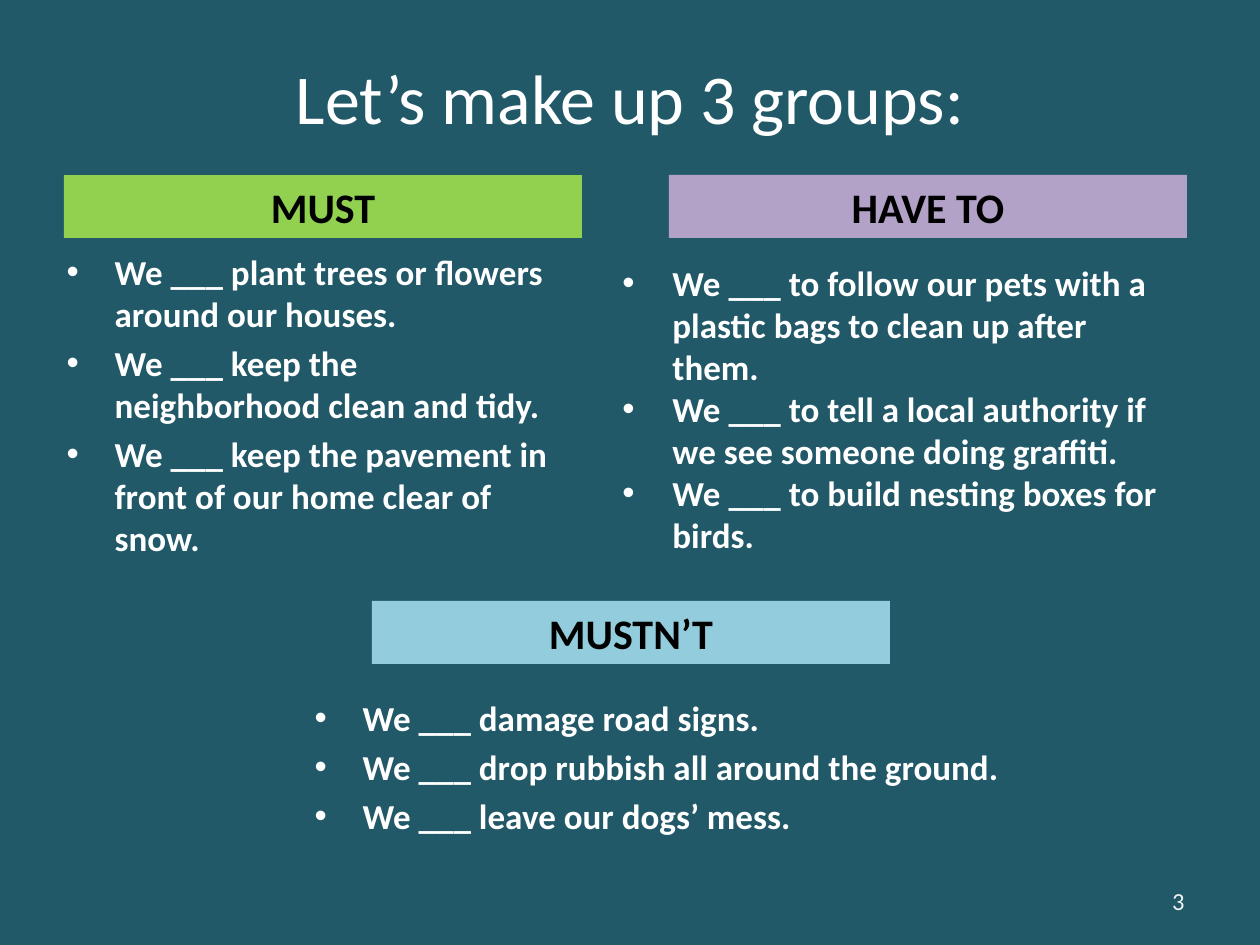
import pptx
import pptx.dml.color
import pptx.enum.shapes
import pptx.enum.text
import pptx.oxml
import pptx.oxml.ns
import pptx.util

EMU_PER_PX = 914400 / 126
ALIGN = pptx.enum.text.PP_ALIGN
ANCHOR = pptx.enum.text.MSO_ANCHOR
BAND_WIDTH, BAND_HEIGHT = 518, 63
TOP_BAND = 175


def px(length):
    return pptx.util.Emu(round(length * EMU_PER_PX))


def color(hex_string):
    return pptx.dml.color.RGBColor.from_string(hex_string)


class GroupSlide:
    """Holds the text style and the slide that is being filled."""

    font_name = "Calibri"
    light, dark = "FFFFFF", "000000"

    def __init__(self, slide, background):
        self.slide = slide
        slide.background.fill.solid()
        slide.background.fill.fore_color.rgb = color(background)

    def place(self, shape, left, top, width, height):
        shape.left, shape.top = px(left), px(top)
        shape.width, shape.height = px(width), px(height)

    def set_text(self, shape, lines, size, font_color, align, anchor, bold=False, gap=0, indent=0):
        """Fill a shape with one paragraph per line; an indent makes them bullets."""
        frame = shape.text_frame
        frame.text = "\n".join(lines)
        frame.word_wrap = True
        frame.auto_size = pptx.enum.text.MSO_AUTO_SIZE.NONE
        frame.vertical_anchor = anchor
        for index, paragraph in enumerate(frame.paragraphs):
            paragraph.alignment = align
            paragraph.space_before = pptx.util.Pt(gap if index else 0)
            if indent:
                self.add_bullet(paragraph, indent)
            font = paragraph.font
            font.name, font.size, font.bold = self.font_name, pptx.util.Pt(size), bold
            font.color.rgb = color(font_color)

    def add_bullet(self, paragraph, indent):
        properties = paragraph._p.get_or_add_pPr()
        properties.set("marL", str(px(indent)))
        properties.set("indent", str(-px(indent)))
        namespace = pptx.oxml.ns.nsdecls("a")
        for element in ('buFont typeface="Arial"', 'buChar char="•"'):
            name, attribute = element.split(" ")
            properties.append(pptx.oxml.parse_xml(f"<a:{name} {namespace} {attribute}/>"))

    def title(self, text, *box):
        shape = self.slide.shapes.title
        self.place(shape, *box)
        self.set_text(shape, [text], 40, self.light, ALIGN.CENTER, ANCHOR.MIDDLE)

    def band(self, text, left, top, fill, placeholder=None):
        """Colour a heading band, on a placeholder of the layout if one is given."""
        if placeholder is None:
            shape = self.slide.shapes.add_shape(
                pptx.enum.shapes.MSO_SHAPE.RECTANGLE, 0, 0, 0, 0)
            shape.shadow.inherit = False
        else:
            shape = self.slide.placeholders[placeholder]
        self.place(shape, left, top, BAND_WIDTH, BAND_HEIGHT)
        shape.fill.solid()
        shape.fill.fore_color.rgb = color(fill)
        shape.line.fill.background()
        self.set_text(shape, [text], 24, self.dark, ALIGN.CENTER, ANCHOR.BOTTOM, bold=True)

    def bullets(self, lines, *box, placeholder=None, gap=0, indent=48):
        if placeholder is None:
            shape = self.slide.shapes.add_textbox(0, 0, 0, 0)
        else:
            shape = self.slide.placeholders[placeholder]
        self.place(shape, *box)
        self.set_text(shape, lines, 20, self.light, ALIGN.LEFT, ANCHOR.TOP,
                      bold=True, gap=gap, indent=indent)

    def page_number(self, number, *box):
        shape = self.slide.shapes.add_textbox(0, 0, 0, 0)
        self.place(shape, *box)
        self.set_text(shape, [str(number)], 14, "F2F2F2", ALIGN.RIGHT, ANCHOR.MIDDLE)


def main():
    presentation = pptx.Presentation()
    presentation.slide_width, presentation.slide_height = px(1260), px(945)
    comparison_layout = presentation.slide_layouts.get_by_name("Comparison")
    groups = GroupSlide(presentation.slides.add_slide(comparison_layout), "215968")

    groups.title("Let’s make up 3 groups:", 63, 38, 1134, 117)

    groups.band("MUST", 64, TOP_BAND, "92D050", placeholder=1)
    groups.bullets([
        "We ___ plant trees or flowers around our houses.",
        "We ___ keep the neighborhood clean and tidy.",
        "We ___ keep the pavement in front of our home clear of snow.",
    ], 54, 244, 515, 348, placeholder=2, gap=4)

    groups.band("MUSTN’T", 372, 601, "93CDDD", placeholder=3)
    groups.bullets([
        "We ___ damage road signs.",
        "We ___ drop rubbish all around the ground.",
        "We ___ leave our dogs’ mess.",
    ], 302, 690, 745, 198, placeholder=4, gap=4)

    groups.page_number(3, 903, 876, 294, 50)

    groups.band("HAVE TO", 669, TOP_BAND, "B3A2C7")
    groups.bullets([
        "We ___ to follow our pets with a plastic bags to clean up after them.",
        "We ___ to tell a local authority if we see someone doing graffiti.",
        "We ___ to build nesting boxes for birds.",
    ], 610, 255, 576, 436, indent=50)

    presentation.save("out.pptx")


if __name__ == "__main__":
    main()
